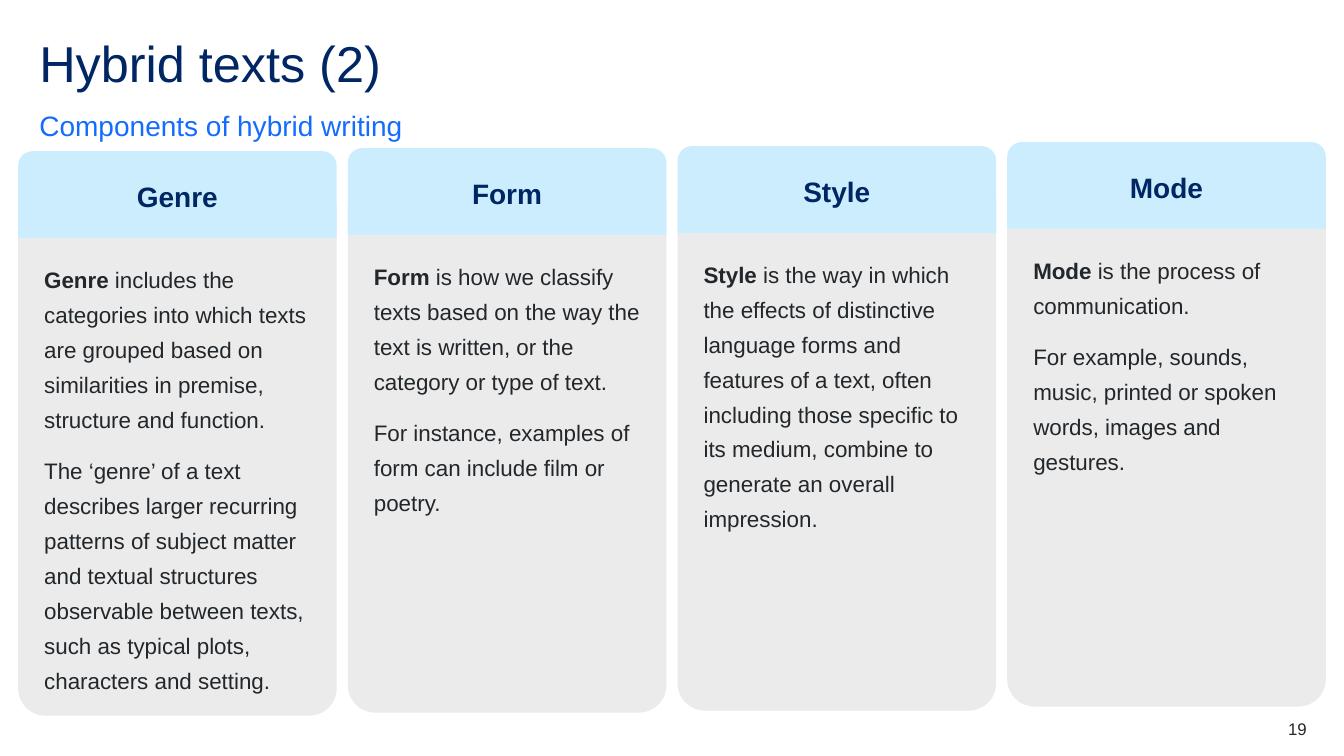
from pptx import Presentation
from pptx.dml.color import RGBColor
from pptx.enum.shapes import MSO_SHAPE
from pptx.enum.text import MSO_ANCHOR, MSO_AUTO_SIZE, PP_ALIGN
from pptx.util import Pt

HUES = {
    "navy": "002664",
    "blue": "146CFD",
    "sky": "CBEDFD",
    "grey": "EBEBEB",
    "ink": "22272B",
}
WIDE, STEP, LEFT = 316, 327, 18

CARDS = [
    ("Genre", 150, 443, [
        " includes the categories into which texts are grouped based on "
        "similarities in premise, structure and function.",
        "The ‘genre’ of a text describes larger recurring patterns of subject "
        "matter and textual structures observable between texts, such as "
        "typical plots, characters and setting."]),
    ("Form", 147, 268, [
        " is how we classify texts based on the way the text is written, or "
        "the category or type of text.",
        "For instance, examples of form can include film or poetry."]),
    ("Style", 145, 286, [
        " is the way in which the effects of distinctive language forms and "
        "features of a text, often including those specific to its medium, "
        "combine to generate an overall impression."]),
    ("Mode", 141, 233, [
        " is the process of communication.",
        "For example, sounds, music, printed or spoken words, images and "
        "gestures."]),
]


class Deck:
    """Holds the style and the current slide, and draws each kind of element."""

    def __init__(self, wide, high, font="Arial", scale=9144):
        self.font, self.scale = font, scale
        self.show = Presentation()
        self.show.slide_width, self.show.slide_height = self.px(wide, high)
        self.slide = self.show.slides.add_slide(self.show.slide_layouts[6])

    def px(self, *sizes):
        return [size * self.scale for size in sizes]

    def fill_text(self, frame, paras, size, hue, align=PP_ALIGN.LEFT,
                  line=None, after=None):
        frame.word_wrap = True
        for i, runs in enumerate(paras):
            para = frame.add_paragraph() if i else frame.paragraphs[0]
            para.alignment = align
            para.line_spacing = line
            if after is not None:
                para.space_after = Pt(after)
            for words, bold in runs:
                run = para.add_run()
                run.text = words
                run.font.name = self.font
                run.font.size = Pt(size)
                run.font.bold = bold
                run.font.color.rgb = RGBColor.from_string(HUES[hue])

    def text(self, box, paras, size, hue, anchor=MSO_ANCHOR.TOP,
             inset=True, **style):
        frame = self.slide.shapes.add_textbox(*self.px(*box)).text_frame
        frame.vertical_anchor = anchor
        if inset:
            frame.auto_size = MSO_AUTO_SIZE.SHAPE_TO_FIT_TEXT
        else:
            frame.margin_left = frame.margin_right = 0
            frame.margin_top = frame.margin_bottom = 0
        self.fill_text(frame, paras, size, hue, **style)

    def panel(self, box, hue, top, base):
        shape = self.slide.shapes.add_shape(
            MSO_SHAPE.ROUND_2_SAME_RECTANGLE, *self.px(*box))
        shape.adjustments[0], shape.adjustments[1] = top, base
        shape.fill.solid()
        shape.fill.fore_color.rgb = RGBColor.from_string(HUES[hue])
        shape.line.fill.background()
        shape.shadow.inherit = False
        return shape

    def card(self, x, y, name, high, notes):
        self.panel((x, y + 53, WIDE, 507), "grey", 0, 0.086)
        head = self.panel((x, y, WIDE, 86), "sky", 0.167, 0)
        head.text_frame.vertical_anchor = MSO_ANCHOR.MIDDLE
        self.fill_text(head.text_frame, [[(name, True)]], 20, "navy",
                       align=PP_ALIGN.CENTER)
        first, *rest = notes
        paras = [[(name, True), (first, False)]]
        paras += [[(note, False)] for note in rest]
        self.text((x + 16, y + 101, 284, high), paras, 16, "ink",
                  line=1.3, after=12)


def main():
    deck = Deck(1333, 750)
    deck.text((39, 39, 1256, 60), [[("Hybrid texts (2)", False)]], 36, "navy",
              inset=False, line=0.9)
    deck.text((39, 107, 1256, 34), [[("Components of hybrid writing", False)]],
              20, "blue", MSO_ANCHOR.BOTTOM, inset=False, line=1.5, after=12)
    for i, (name, y, high, notes) in enumerate(CARDS):
        deck.card(LEFT + i * STEP, y, name, high, notes)
    deck.text((1217, 713, 79, 20), [[("19", False)]], 12, "ink",
              inset=False, align=PP_ALIGN.RIGHT)
    deck.show.save("out.pptx")


if __name__ == "__main__":
    main()
